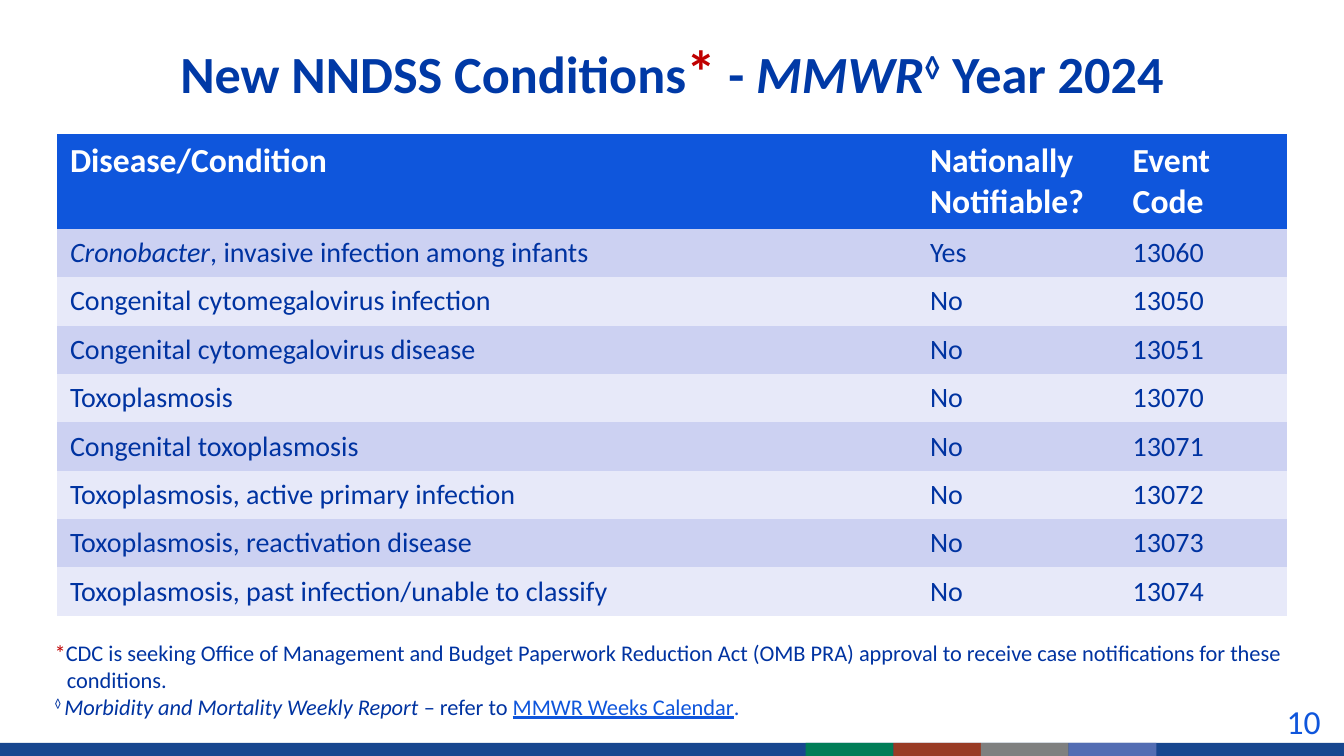
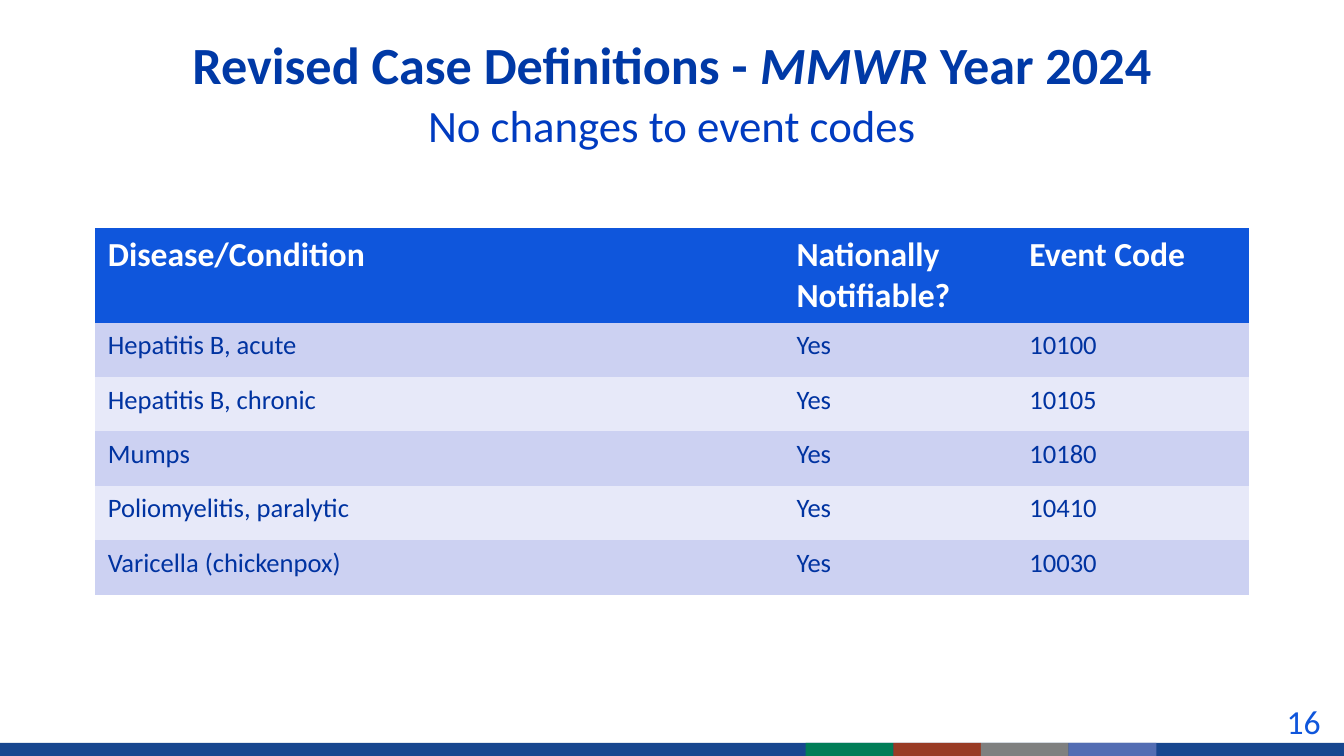
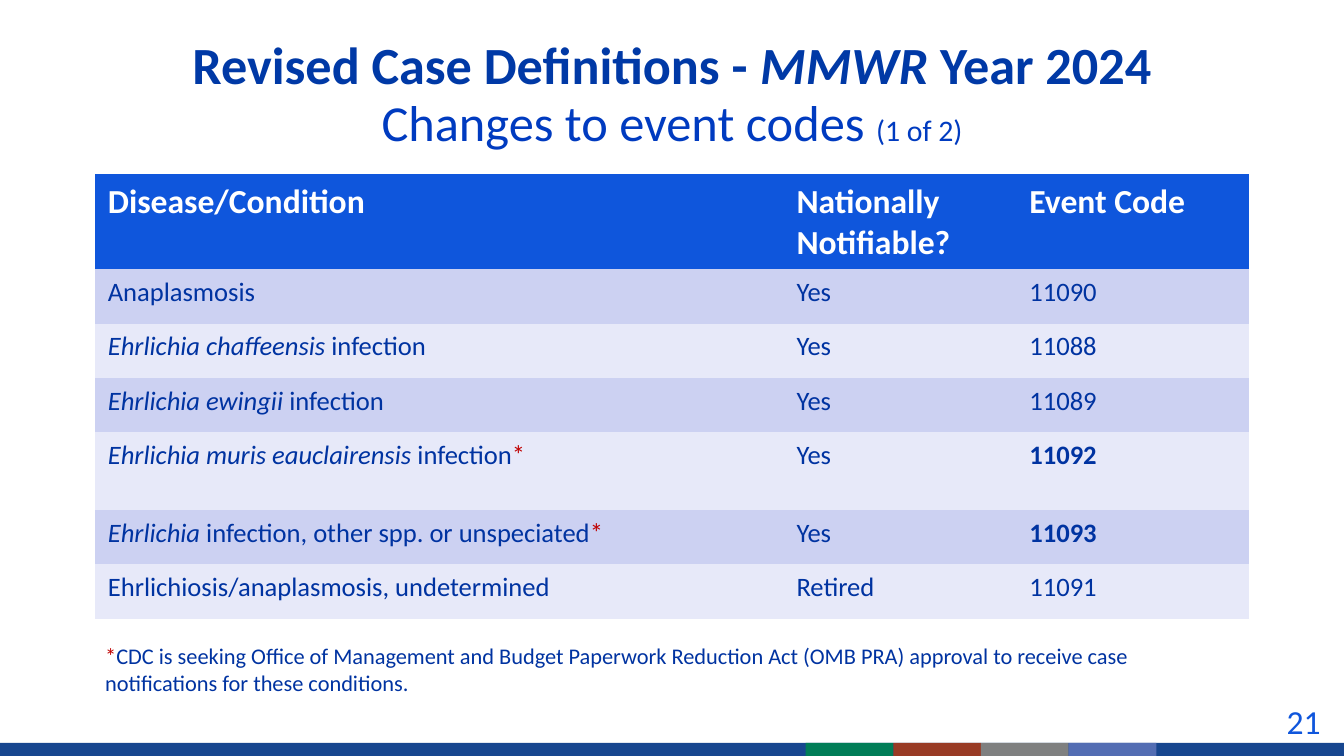
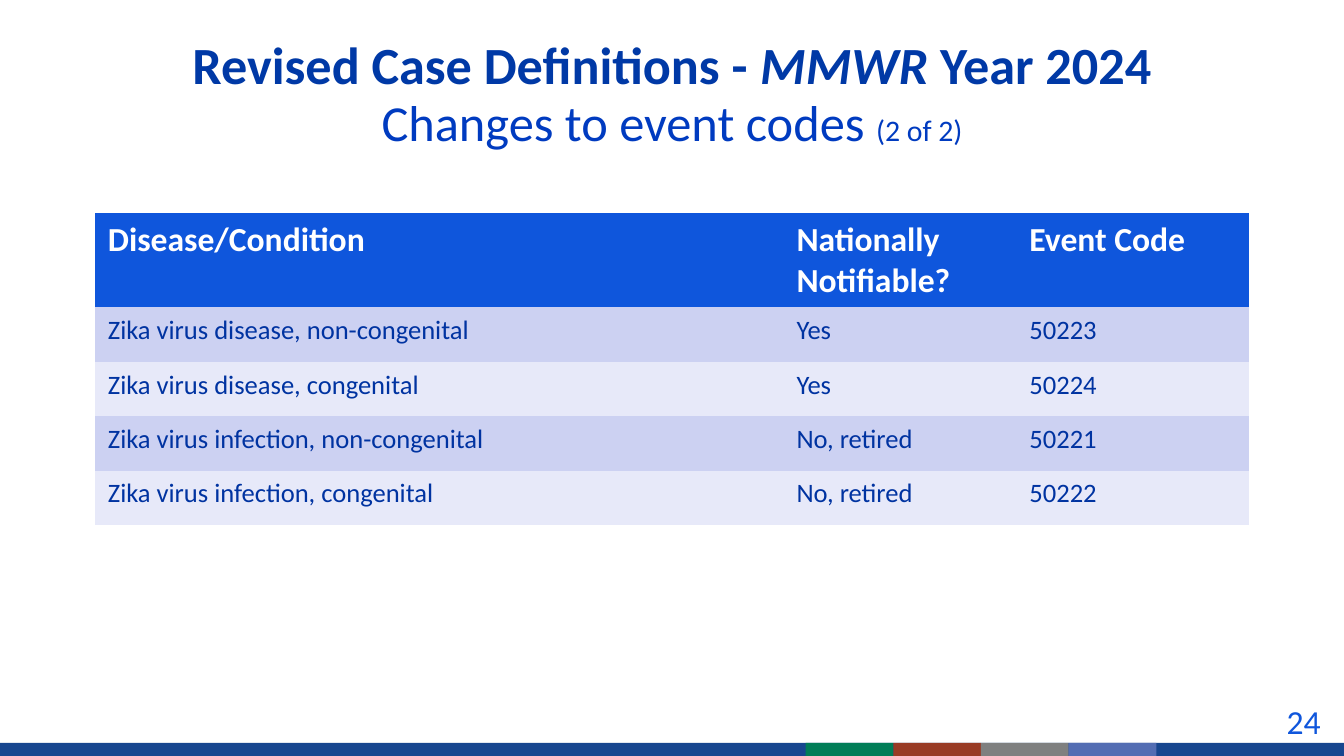
"""Build four slides of condition tables for the 2024 reporting year."""
from dataclasses import dataclass
from typing import Optional

from pptx import Presentation
from pptx.dml.color import RGBColor
from pptx.enum.shapes import MSO_SHAPE
from pptx.enum.text import MSO_ANCHOR, MSO_AUTO_SIZE, PP_ALIGN
from pptx.oxml.ns import qn
from pptx.util import Inches, Pt

RECTANGLE = MSO_SHAPE.RECTANGLE
BOTTOM = MSO_ANCHOR.BOTTOM
NO_AUTOFIT = MSO_AUTO_SIZE.NONE
CENTER = PP_ALIGN.CENTER

SLIDE_WIDTH, SLIDE_HEIGHT = 13.33, 7.5
TITLE_ONLY_LAYOUT = 5
PLAIN_TABLE_STYLE = "{2D5ABB26-0587-4C30-8999-92F81FD0307C}"


@dataclass(frozen=True)
class Theme:
    """Colours, type sizes and the font shared by all slides."""

    font: str = "Calibri"
    title: str = "0039A6"
    subtitle: str = "003BC0"
    body: str = "0033A1"
    accent: str = "0F56DC"
    alert: str = "C00000"
    white: str = "FFFFFF"
    row_fills: tuple = ("CCD1F2", "E7E9F9")
    band: str = "17468F"
    band_accents: tuple = ("007D57", "993B25", "7F8080", "536DB3")
    title_size: float = 37.3
    title_line: float = 40
    star_size: float = 42.7
    subtitle_size: float = 36
    short_subtitle_size: float = 32
    part_size: float = 21.3
    header_size: float = 24
    note_size: float = 16
    page_size: float = 24


THEME = Theme()


@dataclass(frozen=True)
class Span:
    """A stretch of text with only the formatting that differs from its paragraph."""

    text: str
    size: Optional[float] = None
    color: Optional[str] = None
    bold: Optional[bool] = None
    italic: Optional[bool] = None
    underline: Optional[bool] = None
    raised: bool = False


@dataclass(frozen=True)
class TableStyle:
    """Column widths, row heights and body type size of a table."""

    columns: tuple
    row_height: float
    body_size: float
    header_height: float = 0.94


WIDE_TABLE = TableStyle((8.53, 2.01, 1.66), 0.48, 20)
REGULAR_TABLE = TableStyle((6.83, 2.31, 2.31), 0.54, 19)
HEADINGS = ("Disease/Condition", "Nationally Notifiable?", "Event Code")
STAR = Span("*", color=THEME.alert)
APPROVAL_NOTE = (STAR, Span(
    "CDC is seeking Office of Management and Budget Paperwork Reduction Act "
    "(OMB PRA) approval to receive case notifications for these conditions."))


def italic(text):
    """Return an italic span."""
    return Span(text, italic=True)


def set_font(font, size=None, color=None, bold=None, slanted=None, underline=None):
    """Apply the given properties to a font."""
    if size:
        font.size = Pt(size)
    if color:
        font.color.rgb = RGBColor.from_string(color)
    font.bold, font.italic, font.underline = bold, slanted, underline


def write(paragraph, content, size, color, bold=False):
    """Write a string or a sequence of spans into a paragraph."""
    paragraph.font.name = THEME.font
    set_font(paragraph.font, size, color, bold)
    spans = (Span(content),) if isinstance(content, str) else content
    for span in spans:
        if span.text == "\n":
            paragraph.add_line_break()
            continue
        run = paragraph.add_run()
        run.text = span.text
        set_font(run.font, span.size, span.color, span.bold, span.italic, span.underline)
        if span.raised:
            run.font._element.set("baseline", "30000")


def centred(width):
    """Return the left edge that centres a width on the slide."""
    return Inches((SLIDE_WIDTH - width) / 2)


def add_bar(slide, left, width, color):
    """Add one flat segment of the bottom band."""
    height = 0.13
    bar = slide.shapes.add_shape(RECTANGLE, Inches(left), Inches(SLIDE_HEIGHT - height),
                                 Inches(width), Inches(height))
    bar.shadow.inherit = False
    bar.fill.solid()
    bar.fill.fore_color.rgb = RGBColor.from_string(color)
    bar.line.fill.background()


def add_band(slide):
    """Add the bottom band with its coloured segments."""
    first, step = 7.99, 0.87
    add_bar(slide, 0, SLIDE_WIDTH, THEME.band)
    for index, color in enumerate(THEME.band_accents):
        add_bar(slide, first + index * step, step, color)


def add_textbox(slide, left, top, width, height):
    """Add a wrapping text box and return its text frame."""
    frame = slide.shapes.add_textbox(left, Inches(top), Inches(width), Inches(height)).text_frame
    frame.word_wrap = True
    return frame


def add_slide(deck, title, page, title_height=1.25):
    """Add a slide with title, band and page number."""
    slide = deck.slides.add_slide(deck.slide_layouts[TITLE_ONLY_LAYOUT])
    heading, width = slide.shapes.title, 12
    heading.left, heading.top = centred(width), Inches(0.3)
    heading.width, heading.height = Inches(width), Inches(title_height)
    frame = heading.text_frame
    frame.auto_size, frame.vertical_anchor = NO_AUTOFIT, BOTTOM
    line = frame.paragraphs[0]
    line.alignment, line.line_spacing = CENTER, Pt(THEME.title_line)
    write(line, title, THEME.title_size, THEME.title, bold=True)
    add_band(slide)
    number = add_textbox(slide, Inches(0.95 * SLIDE_WIDTH), 6.9, 0.67, 0.4)
    write(number.paragraphs[0], page, THEME.page_size, THEME.accent)
    return slide


def fill_cell(cell, content, fill, size, color, bold=False):
    """Fill one table cell with colour and text."""
    cell.fill.solid()
    cell.fill.fore_color.rgb = RGBColor.from_string(fill)
    cell.margin_left = cell.margin_right = Inches(0.13)
    cell.margin_top = cell.margin_bottom = Inches(0.07)
    write(cell.text_frame.paragraphs[0], content, size, color, bold)


def add_conditions(slide, top, style, conditions, tall_rows=None):
    """Add a centred table of conditions under the shared headings."""
    heights = [style.header_height] + [style.row_height] * len(conditions)
    for row, height in (tall_rows or {}).items():
        heights[row] = height
    width = sum(style.columns)
    table = slide.shapes.add_table(len(heights), len(HEADINGS), centred(width), Inches(top),
                                   Inches(width), Inches(sum(heights))).table
    table._tbl.tblPr.find(qn("a:tableStyleId")).text = PLAIN_TABLE_STYLE
    for column, column_width in zip(table.columns, style.columns):
        column.width = Inches(column_width)
    for row, height in zip(table.rows, heights):
        row.height = Inches(height)
    for column, heading in enumerate(HEADINGS):
        fill_cell(table.cell(0, column), heading, THEME.accent, THEME.header_size,
                  THEME.white, bold=True)
    for row, condition in enumerate(conditions, start=1):
        fill = THEME.row_fills[(row - 1) % 2]
        for column, content in enumerate(condition):
            fill_cell(table.cell(row, column), content, fill, style.body_size, THEME.body)


def add_footnotes(slide, top, width, height, notes, hanging=0):
    """Add centred footnotes, the first with an optional hanging indent."""
    frame = add_textbox(slide, centred(width), top, width, height)
    for index, note in enumerate(notes):
        paragraph = frame.add_paragraph() if index else frame.paragraphs[0]
        write(paragraph, note, THEME.note_size, THEME.body)
    if hanging:
        properties = frame.paragraphs[0]._p.get_or_add_pPr()
        properties.set("marL", str(Inches(hanging)))
        properties.set("indent", str(-Inches(hanging)))


def revised_title(subtitle, size, part=None):
    """Return the two-line title of a revised definitions slide."""
    spans = [Span("Revised Case Definitions - "), italic("MMWR"), Span(" Year 2024"), Span("\n"),
             Span(subtitle, size, THEME.subtitle, bold=False)]
    if part:
        spans.append(Span(part, THEME.part_size, THEME.subtitle, bold=False))
    return spans


def add_new_conditions(deck):
    """Add the slide of new conditions."""
    title = (Span("New NNDSS Conditions"), Span("*", THEME.star_size, THEME.alert), Span(" - "),
             italic("MMWR"), Span("◊", raised=True), Span(" Year 2024"))
    slide = add_slide(deck, title, "10", title_height=0.8)
    add_conditions(slide, 1.33, WIDE_TABLE, (
        ((italic("Cronobacter"), Span(", invasive infection among infants")), "Yes", "13060"),
        ("Congenital cytomegalovirus infection", "No", "13050"),
        ("Congenital cytomegalovirus disease", "No", "13051"),
        ("Toxoplasmosis", "No", "13070"),
        ("Congenital toxoplasmosis", "No", "13071"),
        ("Toxoplasmosis, active primary infection", "No", "13072"),
        ("Toxoplasmosis, reactivation disease", "No", "13073"),
        ("Toxoplasmosis, past infection/unable to classify", "No", "13074"),
    ))
    calendar_note = (Span("◊ ", raised=True), italic("Morbidity and Mortality Weekly Report "),
                     Span("– refer to "),
                     Span("MMWR Weeks Calendar", color=THEME.accent, underline=True),
                     Span(".", color=THEME.accent))
    add_footnotes(slide, 6.29, 12.44, 0.91, (APPROVAL_NOTE, calendar_note), hanging=0.12)


def add_unchanged_codes(deck):
    """Add the slide of revised definitions that keep their codes."""
    title = revised_title("No changes to event codes", THEME.short_subtitle_size)
    slide = add_slide(deck, title, "16")
    add_conditions(slide, 2.26, REGULAR_TABLE, (
        ("Hepatitis B, acute", "Yes", "10100"),
        ("Hepatitis B, chronic", "Yes", "10105"),
        ("Mumps", "Yes", "10180"),
        ("Poliomyelitis, paralytic", "Yes", "10410"),
        ("Varicella (chickenpox)", "Yes", "10030"),
    ))


def add_ehrlichia_codes(deck):
    """Add the first slide of changed codes."""
    title = revised_title("Changes to event codes ", THEME.subtitle_size, "(1 of 2)")
    slide = add_slide(deck, title, "21")
    infection = Span("infection")
    add_conditions(slide, 1.73, REGULAR_TABLE, (
        ("Anaplasmosis", "Yes", "11090"),
        ((italic("Ehrlichia chaffeensis "), infection), "Yes", "11088"),
        ((italic("Ehrlichia ewingii "), infection), "Yes", "11089"),
        ((italic("Ehrlichia muris eauclairensis "), infection, STAR), "Yes",
         (Span("11092", bold=True),)),
        ((italic("Ehrlichia"), Span(" infection, other spp. or unspeciated"), STAR), "Yes",
         (Span("11093", bold=True),)),
        ("Ehrlichiosis/anaplasmosis, undetermined", "Retired", "11091"),
    ), tall_rows={4: 0.77})
    add_footnotes(slide, 6.32, 11.44, 0.64, (APPROVAL_NOTE,))


def add_zika_codes(deck):
    """Add the second slide of changed codes."""
    title = revised_title("Changes to event codes ", THEME.subtitle_size, "(2 of 2)")
    slide = add_slide(deck, title, "24")
    add_conditions(slide, 2.11, REGULAR_TABLE, (
        ("Zika virus disease, non-congenital", "Yes", "50223"),
        ("Zika virus disease, congenital", "Yes", "50224"),
        ("Zika virus infection, non-congenital", "No, retired", "50221"),
        ("Zika virus infection, congenital", "No, retired", "50222"),
    ))


def main():
    """Build and save the presentation."""
    deck = Presentation()
    deck.slide_width, deck.slide_height = Inches(SLIDE_WIDTH), Inches(SLIDE_HEIGHT)
    add_new_conditions(deck)
    add_unchanged_codes(deck)
    add_ehrlichia_codes(deck)
    add_zika_codes(deck)
    deck.save("out.pptx")


if __name__ == "__main__":
    main()
